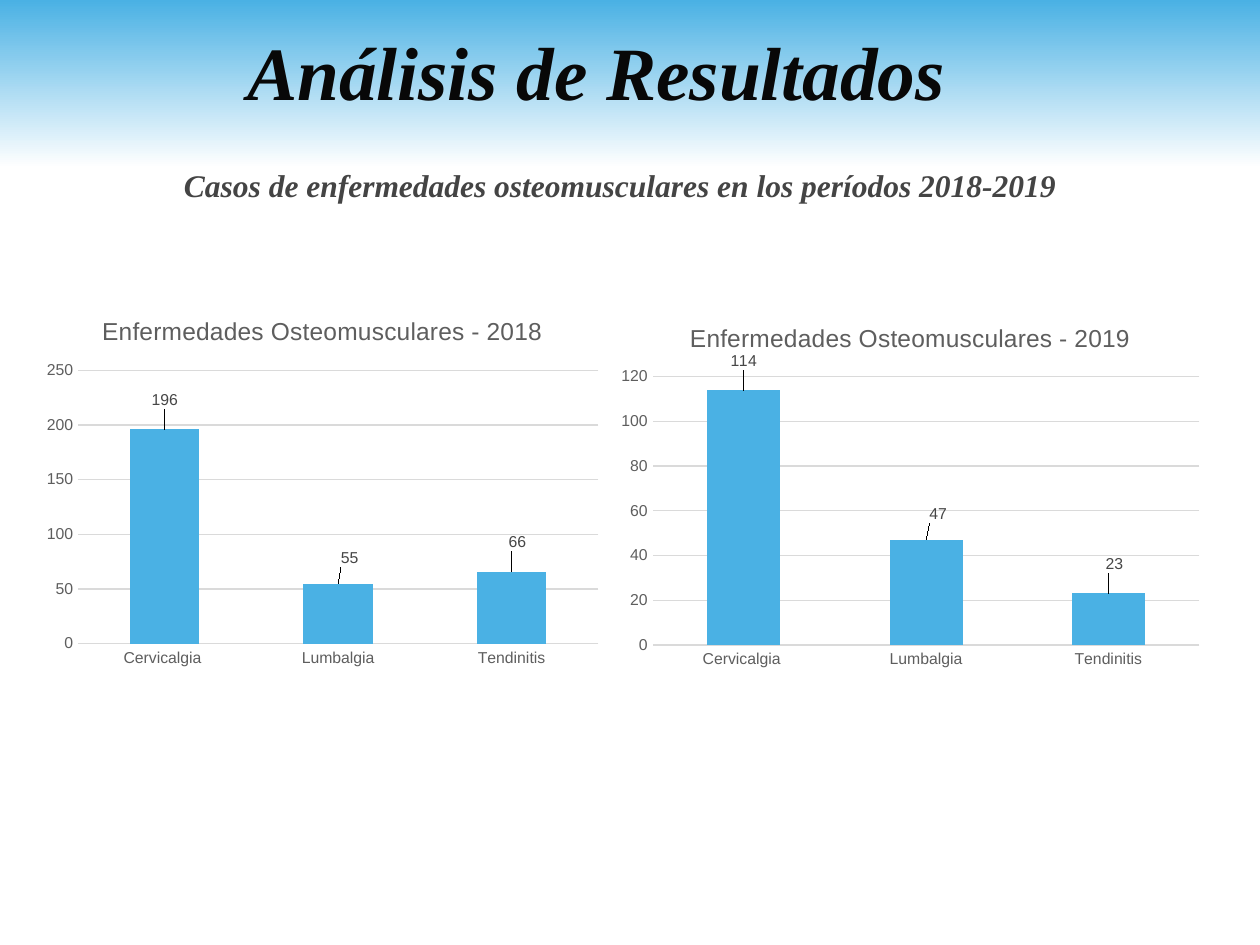
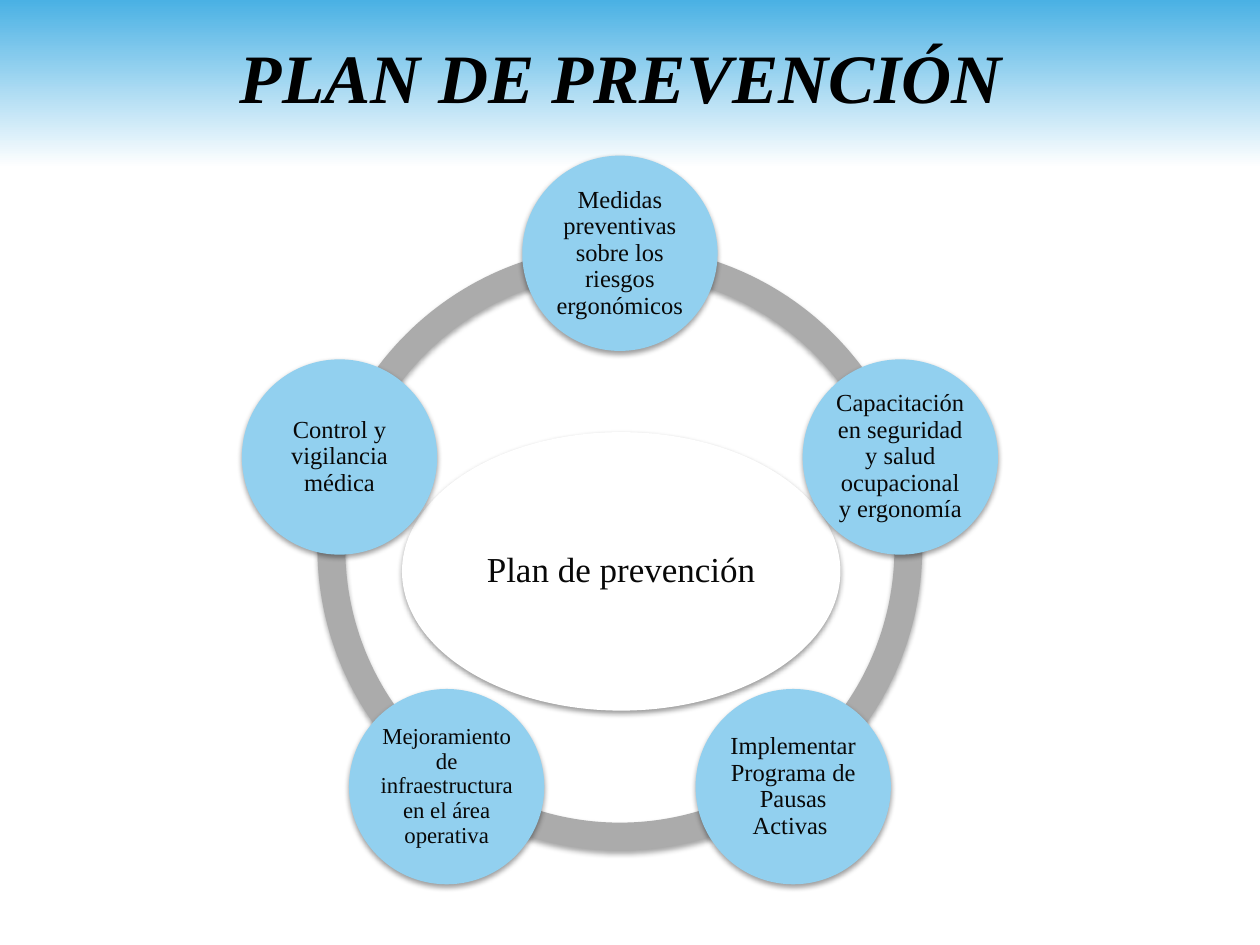
import math
from dataclasses import dataclass
from typing import Optional

import pptx
import pptx.chart.chart
import pptx.chart.data
import pptx.dml.color
import pptx.enum.chart
import pptx.enum.shapes
import pptx.enum.text
import pptx.oxml
import pptx.oxml.ns
import pptx.util

Inches = pptx.util.Inches
Pt = pptx.util.Pt
qn = pptx.oxml.ns.qn
SHAPE = pptx.enum.shapes.MSO_SHAPE
ALIGN = pptx.enum.text.PP_ALIGN


@dataclass(frozen=True)
class Theme:
    serif: str = "Times New Roman"
    sans: str = "Arial"
    blue: str = "4AB1E4"
    pale_blue: str = "92D0EF"
    white: str = "FFFFFF"
    ring: str = "ABABAB"
    black: str = "000000"
    ink: str = "080808"
    subtitle: str = "444444"
    label: str = "464646"
    axis: str = "5E5E5E"
    grid: str = "DADADA"
    heading_pt: float = 43
    title_pt: float = 39.6
    subtitle_pt: float = 18
    hub_pt: float = 20
    node_pt: float = 14
    chart_title_pt: float = 14
    chart_pt: float = 10
    tick_pt: float = 9


@dataclass(frozen=True)
class Box:
    left: float
    top: float
    width: float
    height: float

    def emu(self) -> tuple:
        return tuple(Inches(v) for v in (self.left, self.top, self.width, self.height))


@dataclass(frozen=True)
class TextStyle:
    size: float
    color: str
    heavy: bool = False
    align: ALIGN = ALIGN.CENTER
    spacing: Optional[float] = None


@dataclass(frozen=True)
class YearChart:
    year: int
    box: Box
    cases: tuple
    axis_max: int
    step: int


@dataclass(frozen=True)
class Node:
    angle: int
    text: str
    size: float


T = Theme()
DISEASES = ("Cervicalgia ", "Lumbalgia", "Tendinitis")
LABEL_SHIFTS = ((0, -0.04), (0.02, -0.03), (0.01, -0.04))
YEAR_CHARTS = (
    YearChart(2018, Box(0.28, 2.36, 4.56, 2.99), (196, 55, 66), 250, 50),
    YearChart(2019, Box(4.84, 2.41, 4.77, 2.95), (114, 47, 23), 120, 20),
)
PLOT_LEFT, PLOT_TOP, PLOT_RIGHT, PLOT_BOTTOM = 0.34, 0.58, 0.09, 0.24
CHART_TITLE_WIDTH, CHART_TITLE_TOP = 3.57, 0.11

NODES = (
    Node(270, "Medidas preventivas sobre los riesgos ergonómicos", T.node_pt),
    Node(342, "Capacitación en seguridad y salud ocupacional y ergonomía", T.node_pt),
    Node(54, "Implementar Programa de Pausas Activas ", T.node_pt),
    Node(126, "Mejoramiento de infraestructura en el área operativa", T.node_pt - 1),
    Node(198, "Control y vigilancia médica", T.node_pt),
)
CENTER_X, CENTER_Y = 4.92, 4.35
RING_SIZE, RING_THICKNESS = 4.8, 0.046
NODE_ORBIT, NODE_SIZE = 2.34, 1.55
HUB = Box(3.19, 3.43, 3.48, 2.21)


def rgb(value: str) -> pptx.dml.color.RGBColor:
    return pptx.dml.color.RGBColor.from_string(value)


def set_font(font, size: float, color: str, name: str) -> None:
    font.size = Pt(size)
    font.color.rgb = rgb(color)
    font.name = name


def write(tf, text: str, style: TextStyle, inset: Optional[float] = None) -> None:
    tf.word_wrap = True
    tf.auto_size = pptx.enum.text.MSO_AUTO_SIZE.NONE
    tf.vertical_anchor = pptx.enum.text.MSO_ANCHOR.MIDDLE
    if inset is not None:
        tf.margin_left = tf.margin_right = tf.margin_top = tf.margin_bottom = Inches(inset)
    p = tf.paragraphs[0]
    p.alignment = style.align
    if style.spacing:
        p.line_spacing = style.spacing
    r = p.add_run()
    r.text = text
    set_font(r.font, style.size, style.color, T.serif)
    r.font.bold = r.font.italic = style.heavy


def add_titled_slide(prs, box: Box, text: str, style: TextStyle):
    s = prs.slides.add_slide(prs.slide_layouts[5])
    title = s.shapes.title
    title.left, title.top, title.width, title.height = box.emu()
    write(title.text_frame, text, style)
    return s


def add_master_band(prs, s) -> None:
    band = s.shapes.add_shape(SHAPE.RECTANGLE, *Box(0, 0, 10, 1.33).emu())
    band.shadow.inherit = False
    band.line.fill.background()
    band.fill.gradient()
    band.fill.gradient_angle = 270
    for stop, color in zip(band.fill.gradient_stops, (T.blue, T.white)):
        stop.color.rgb = rgb(color)
    band.element.nvSpPr.cNvPr.set("id", "99")
    prs.slide_master.shapes.element.insert(2, band.element)


def add_shadowed(s, kind: SHAPE, box: Box, color: str, alpha: int, distance: float):
    sp = s.shapes.add_shape(kind, *box.emu())
    sp.fill.solid()
    sp.fill.fore_color.rgb = rgb(color)
    sp.line.fill.background()
    sp.shadow.inherit = False
    effects = sp.element.spPr.find(qn("a:effectLst"))
    effects.append(pptx.oxml.parse_xml(
        f'<a:outerShdw {pptx.oxml.ns.nsdecls("a")} blurRad="{Pt(3.1)}" '
        f'dist="{Pt(distance)}" dir="5400000" rotWithShape="0"><a:srgbClr val="{T.black}">'
        f'<a:alpha val="{alpha * 1000}"/></a:srgbClr></a:outerShdw>'))
    return sp


def set_layout(element, index: int, **values) -> None:
    old = element.find(qn("c:layout"))
    if old is not None:
        element.remove(old)
    items = "".join(f'<c:{tag} val="{value}"/>' for tag, value in values.items())
    element.insert(index, pptx.oxml.parse_xml(
        f'<c:layout {pptx.oxml.ns.nsdecls("c")}><c:manualLayout>{items}'
        '</c:manualLayout></c:layout>'))


def hide_leader_lines(labels) -> None:
    for flag in labels.findall(qn("c:showLeaderLines")):
        labels.remove(flag)
    labels.append(pptx.oxml.parse_xml(
        f'<c:extLst {pptx.oxml.ns.nsdecls("c")}>'
        '<c:ext uri="{CE6537A1-D6FC-4f65-9D91-7224C49458BB}" '
        'xmlns:c15="http://schemas.microsoft.com/office/drawing/2012/chart">'
        '<c15:showLeaderLines val="0"/></c:ext></c:extLst>'))


def place_chart_parts(chart: pptx.chart.chart.Chart, box: Box) -> None:
    w, h = box.width, box.height
    root = chart.element
    set_layout(root.find(".//" + qn("c:plotArea")), 0,
               layoutTarget="inner", xMode="edge", yMode="edge",
               x=PLOT_LEFT / w, y=PLOT_TOP / h,
               w=(w - PLOT_LEFT - PLOT_RIGHT) / w, h=(h - PLOT_TOP - PLOT_BOTTOM) / h)
    set_layout(root.find(".//" + qn("c:title")), 1, xMode="edge", yMode="edge",
               x=(w - CHART_TITLE_WIDTH) / 2 / w, y=CHART_TITLE_TOP / h)
    for label, (dx, dy) in zip(root.iter(qn("c:dLbl")), LABEL_SHIFTS):
        set_layout(label, 1, x=dx, y=dy)
    hide_leader_lines(root.find(".//" + qn("c:dLbls")))


def add_year_chart(s, item: YearChart) -> None:
    data = pptx.chart.data.CategoryChartData(number_format="0")
    data.categories = DISEASES
    data.add_series("Series 1", item.cases)
    chart = s.shapes.add_chart(
        pptx.enum.chart.XL_CHART_TYPE.COLUMN_CLUSTERED, *item.box.emu(), data).chart
    set_font(chart.font, T.chart_pt, T.ink, T.sans)
    chart.has_legend = False
    r = chart.chart_title.text_frame.paragraphs[0].add_run()
    r.text = f"Enfermedades Osteomusculares - {item.year}"
    set_font(r.font, T.chart_title_pt, T.axis, T.sans)
    r.font.bold = False

    for axis in (chart.category_axis, chart.value_axis):
        axis.major_tick_mark = axis.minor_tick_mark = pptx.enum.chart.XL_TICK_MARK.NONE
        axis.format.line.fill.background()
        set_font(axis.tick_labels.font, T.tick_pt, T.axis, T.sans)
    values = chart.value_axis
    values.minimum_scale, values.maximum_scale = 0, item.axis_max
    values.major_unit = item.step
    values.major_gridlines.format.line.color.rgb = rgb(T.grid)
    values.major_gridlines.format.line.width = Pt(0.75)

    plot = chart.plots[0]
    plot.gap_width = 150
    plot.vary_by_categories = False
    series = plot.series[0]
    series.format.fill.solid()
    series.format.fill.fore_color.rgb = rgb(T.blue)
    labels = series.data_labels
    labels.show_value = True
    set_font(labels.font, T.tick_pt, T.label, T.sans)
    for i in range(len(item.cases)):
        label = series.points[i].data_label
        set_font(label.font, T.tick_pt, T.label, T.sans)
        label.position = pptx.enum.chart.XL_LABEL_POSITION.OUTSIDE_END
    place_chart_parts(chart, item.box)


def centered_box(x: float, y: float, size: float) -> Box:
    return Box(x - size / 2, y - size / 2, size, size)


def add_prevention_cycle(s) -> None:
    sweep = 360 // len(NODES)
    for node in reversed(NODES):
        arc = add_shadowed(s, SHAPE.BLOCK_ARC, centered_box(CENTER_X, CENTER_Y, RING_SIZE),
                           T.ring, 35, 1.8)
        arc.adjustments[0] = node.angle * 0.6
        arc.adjustments[1] = (node.angle + sweep) % 360 * 0.6
        arc.adjustments[2] = RING_THICKNESS
    hub = add_shadowed(s, SHAPE.OVAL, HUB, T.white, 38, 1.6)
    write(hub.text_frame, "Plan de prevención", TextStyle(T.hub_pt, T.ink, spacing=0.9), 0.03)
    for node in NODES:
        turn = math.radians(node.angle)
        box = centered_box(CENTER_X + NODE_ORBIT * math.cos(turn),
                           CENTER_Y + NODE_ORBIT * math.sin(turn), NODE_SIZE)
        sp = add_shadowed(s, SHAPE.OVAL, box, T.pale_blue, 38, 1.6)
        write(sp.text_frame, node.text, TextStyle(node.size, T.ink, spacing=0.9), 0.02)


def main() -> None:
    prs = pptx.Presentation()
    prs.slide_width, prs.slide_height = Inches(10), Inches(7.5)

    s = add_titled_slide(prs, Box(1.36, 0.92, 7.29, 1.1),
                         "Casos de enfermedades osteomusculares en los períodos 2018-2019",
                         TextStyle(T.subtitle_pt, T.subtitle, True, ALIGN.JUSTIFY))
    add_master_band(prs, s)
    heading = s.shapes.add_textbox(*Box(0.23, 0.08, 9, 0.95).emu())
    write(heading.text_frame, "Análisis de Resultados", TextStyle(T.heading_pt, T.ink, True))
    for item in YEAR_CHARTS:
        add_year_chart(s, item)

    s = add_titled_slide(prs, Box(0.43, 0.13, 9, 0.94), "PLAN DE PREVENCIÓN",
                         TextStyle(T.title_pt, T.black, True))
    add_prevention_cycle(s)
    prs.save("out.pptx")


if __name__ == "__main__":
    main()
